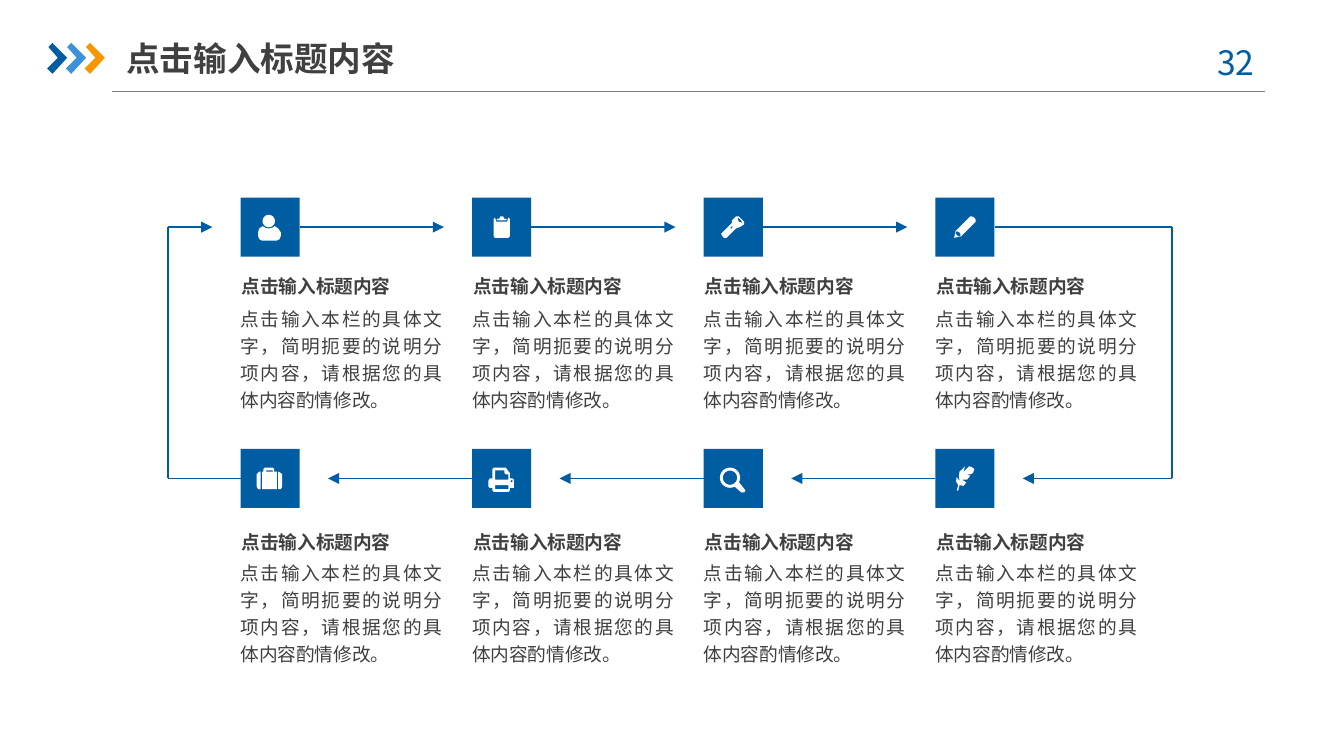
"""Build an eight-step loop slide with icon tiles, captions and arrows."""
from math import cos, pi, sin

from lxml.etree import SubElement
from pptx import Presentation
from pptx.dml.color import RGBColor as RGB
from pptx.enum.shapes import MSO_CONNECTOR as LINK, MSO_SHAPE as PRESET
from pptx.enum.text import MSO_ANCHOR as ANCHOR, MSO_AUTO_SIZE as FIT, PP_ALIGN as ALIGN
from pptx.oxml.ns import qn
from pptx.util import Inches, Pt

COLORS = {"blue": "005DA2", "sky": "3992DB", "orange": "F79600",
          "text": "404040", "rule": "808080", "white": "FFFFFF"}
FONT = "Noto Sans CJK SC"
HEADING = "点击输入标题内容"
DETAIL = "点击输入本栏的具体文字，简明扼要的说明分项内容，请根据您的具体内容酌情修改。"

deck = Presentation()
deck.slide_width = Inches(10)
deck.slide_height = deck.slide_width * 9 // 16
slide = deck.slides.add_slide(deck.slide_layouts[6])
shapes = slide.shapes


def disc(x, y, radius, steps=32):
    return [(x + radius * cos(2 * pi * i / steps), y + radius * sin(2 * pi * i / steps))
            for i in range(steps)]


def write(words, box, size, color="text", bold=False, align=ALIGN.LEFT, spacing=None, **frame_format):
    frame = shapes.add_textbox(*map(Inches, box)).text_frame
    for key, value in {"word_wrap": True, **frame_format}.items():
        setattr(frame, key, value)
    paragraph = frame.paragraphs[0]
    paragraph.alignment, paragraph.line_spacing = align, spacing
    run = paragraph.add_run()
    run.text = words
    for key, value in {"name": FONT, "size": Pt(size), "bold": bold}.items():
        setattr(run.font, key, value)
    run.font.color.rgb = RGB.from_string(COLORS[color])
    SubElement(run.font._element, qn("a:ea"), typeface=FONT)


TILE, LEFT, TOP = 0.44, 1.79, 1.47
COLUMN, ROW = (6.96 - LEFT) / 3, 1.87
columns = [LEFT + COLUMN * i for i in range(4)]
rows = [TOP, TOP + ROW]
upper, lower = [top + TILE / 2 for top in rows]
loop_left, loop_right = 1.25, 8.72
REACH, GAP = COLUMN - TILE - 0.21, 0.21

links = [(0.83, 0.68, 9.41, 0.68, "rule", 0.75, False)]
for x in columns[:3]:
    links.append((x + TILE, upper, x + TILE + REACH, upper, "blue", 1, True))
for x in columns[1:]:
    links.append((x, lower, x - REACH, lower, "blue", 1, True))
links += [
    (columns[3] + TILE, upper, loop_right, upper, "blue", 1, False),
    (loop_right, upper, loop_right, lower, "blue", 1, False),
    (loop_right, lower, columns[3] + TILE + GAP, lower, "blue", 1, True),
    (LEFT, lower, loop_left, lower, "blue", 1, False),
    (loop_left, lower, loop_left, upper, "blue", 1, False),
    (loop_left, upper, LEFT - GAP, upper, "blue", 1, True),
]
for x1, y1, x2, y2, color, weight, arrow in links:
    link = shapes.add_connector(LINK.STRAIGHT, *map(Inches, (x1, y1, x2, y2)))
    link.line.color.rgb = RGB.from_string(COLORS[color])
    link.line.width = Pt(weight)
    if arrow:
        SubElement(link.line._get_or_add_ln(), qn("a:tailEnd"), type="triangle")
    SubElement(link._element.spPr, qn("a:effectLst"))

person = [disc(21, 17.5, 4.6),
          [(13, 26), (14, 23), (16.5, 21.3), (18.5, 22.6), (21, 23), (23.5, 22.6), (25.5, 21.3),
           (28, 23), (30, 26), (30, 28.5), (29, 31), (27, 32), (16, 32), (14, 31), (13, 28.5)]]
clipboard = [[(27, 15), (26, 18), (18, 18), (17, 15), (16, 16), (16, 29), (17, 30), (27, 30),
              (28, 29), (28, 16)],
             [(25, 17), (26, 16), (24, 16), (23, 14), (21, 14), (20, 16), (18, 16), (19, 17)]]
flashlight = [[(28, 16), (26, 14), (24, 14), (21, 17), (21, 19), (13, 27), (14, 29), (15, 30),
               (17, 30), (24, 23), (27, 22), (30, 20), (30, 18)],
              [(26, 18), (25, 15), (27, 16), (29, 19)],
              [(20, 23), (20, 22), (22, 21), (21, 23)]]
pencil = [[(29, 15), (27, 14), (26, 14), (15, 25), (14, 30), (19, 29), (30, 18), (30, 16.5)],
          [(18, 29), (17, 29), (15, 27), (15, 26), (16, 25), (18, 26), (19, 28)]]
suitcase = [[(13, 18), (12, 19), (12, 28), (13, 30), (15, 30), (15, 17), (14, 17)],
            [(25, 17), (25, 15), (24, 14), (18, 14), (17, 15), (17, 17), (16, 17), (16, 30),
             (27, 30), (27, 17)],
            [(24, 17), (19, 17), (19, 16), (24, 16)],
            [(28, 17), (30, 18), (31, 19), (31, 28), (30, 30), (28, 30)]]
printer = [[(30, 22), (28, 22), (28, 18), (25, 14), (16, 14), (15, 15), (15, 22), (13, 22),
            (12, 24), (12, 28), (13, 29), (15, 29), (15, 31), (16, 32), (27, 32), (28, 31),
            (28, 29), (31, 29), (31, 23)],
           [(27, 23), (17, 23), (17, 16), (24, 16), (24, 18), (25, 19), (27, 19)],
           [(27, 30), (17, 30), (17, 27), (27, 27)], disc(29.3, 24, 0.8)]
magnifier = [disc(19.5, 21.5, 7.5), disc(19.5, 21.5, 5.3),
             [(22.9, 28.2), (28, 32.5), (30, 32.5), (31, 31), (26.2, 24.9), (24.8, 26.8)]]
feather = [[(17, 31), (18, 27), (21, 27.5), (23, 25), (20, 23), (23.5, 23), (26, 20), (23, 19),
            (26, 19), (28, 18), (29, 15), (27, 13.5), (25, 13), (21, 17), (22, 13), (18, 17),
            (17.5, 20), (18, 24), (16, 21), (15.3, 24), (17, 27), (16, 31)]]
chevron = [[(1, 3), (4, 0), (15, 11), (4, 23), (0, 19), (8, 11)]]

outlines = [(chevron, 0.35 + 0.14 * i, 0.32, color)
            for i, color in enumerate(("blue", "sky", "orange"))]
icon_rows = [(person, clipboard, flashlight, pencil), (suitcase, printer, magnifier, feather)]
for top, heading_top, detail_top, icons in zip(rows, (2.02, 3.92), (2.26, 4.15), icon_rows):
    for x, icon in zip(columns, icons):
        tile = shapes.add_shape(PRESET.RECTANGLE, *map(Inches, (x, top, TILE, TILE)))
        tile.shadow.inherit = False
        tile.fill.solid()
        tile.fill.fore_color.rgb = RGB.from_string(COLORS["blue"])
        tile.line.fill.background()
        outlines.append((icon, x, top, "white"))
        write(DETAIL, (x, detail_top, 1.5, 0.81), 10, align=ALIGN.JUSTIFY, spacing=1.2,
              auto_size=FIT.SHAPE_TO_FIT_TEXT,
              margin_left=0, margin_right=0, margin_top=0, margin_bottom=0)
        write(HEADING, (x - 0.09, heading_top, 1.34, 0.22), 10, bold=True,
              vertical_anchor=ANCHOR.MIDDLE)

for contours, x, y, color in outlines:
    builder = None
    for contour in contours:
        start, *rest = [(Inches(px / 100), Inches(py / 100)) for px, py in contour]
        if builder is None:
            builder = shapes.build_freeform(*start)
        else:
            builder.move_to(*start)
        builder.add_line_segments(rest, close=True)
    outline = builder.convert_to_shape(Inches(x), Inches(y))
    outline.shadow.inherit = False
    outline.fill.solid()
    outline.fill.fore_color.rgb = RGB.from_string(COLORS[color])
    outline.line.fill.background()

write("32 ", (8.86, 0.26, 0.73, 0.4), 18, "blue", align=ALIGN.CENTER,
      auto_size=FIT.SHAPE_TO_FIT_TEXT)
write(HEADING, (0.94, 0.22, 2.33, 0.42), 18, bold=True, vertical_anchor=ANCHOR.MIDDLE,
      margin_left=0, margin_right=0)

deck.save("out.pptx")
